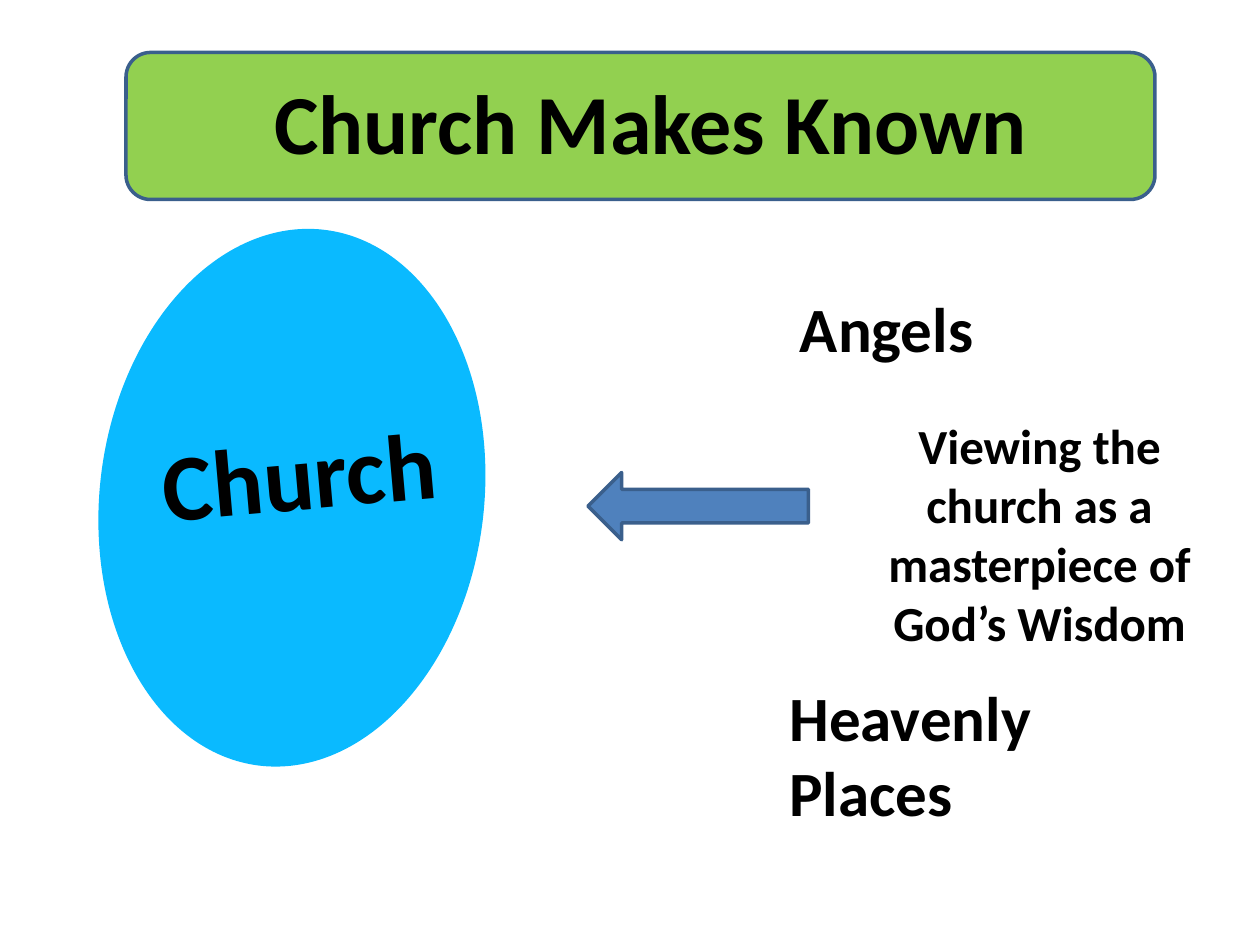
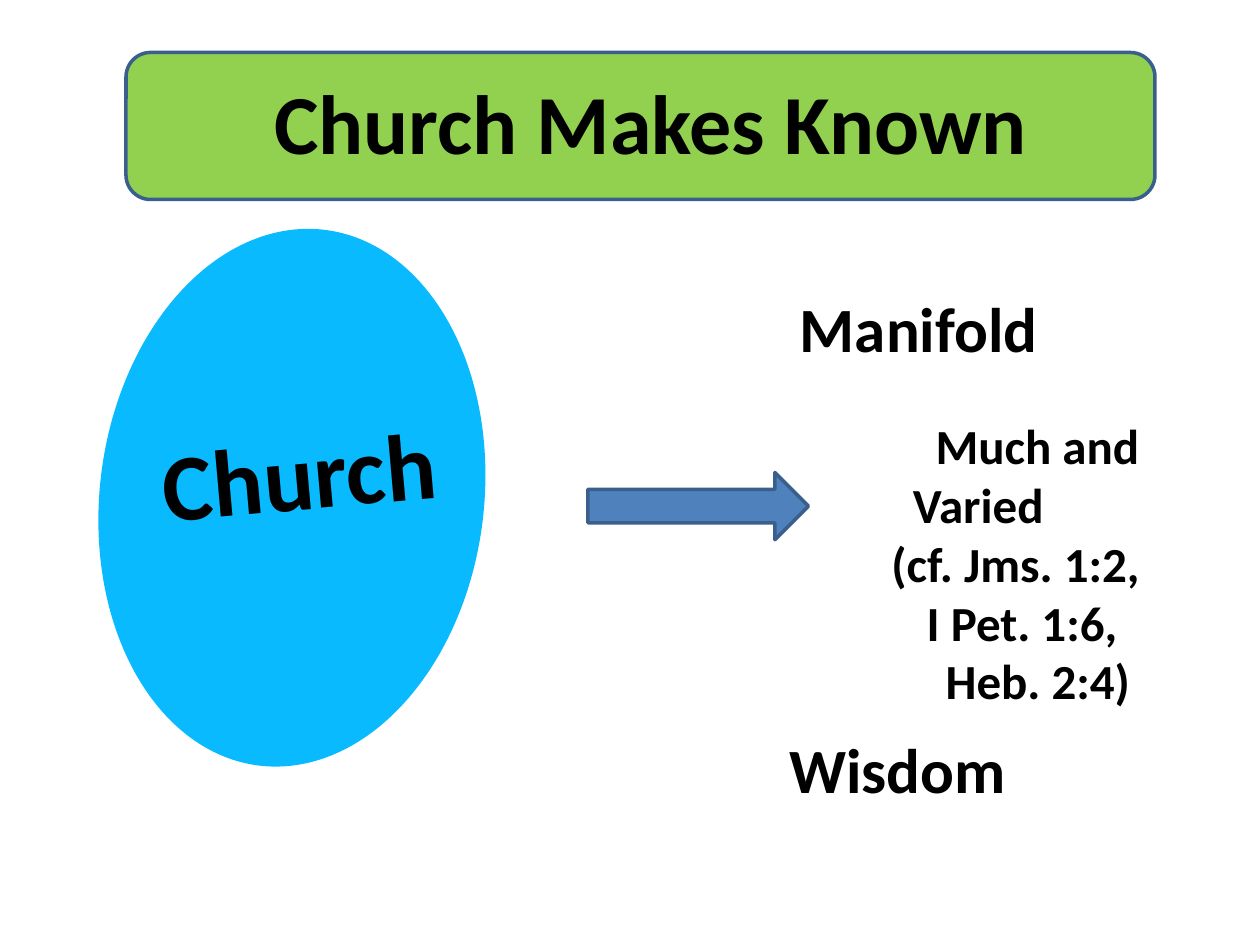
from dataclasses import dataclass
from typing import NamedTuple

import pptx
import pptx.dml.color
import pptx.enum.shapes
import pptx.enum.text
import pptx.util

SHAPES = pptx.enum.shapes.MSO_SHAPE
ALIGN = pptx.enum.text.PP_ALIGN
ANCHOR = pptx.enum.text.MSO_ANCHOR
TITLE_ONLY_LAYOUT = 5


@dataclass(frozen=True)
class Theme:
    font: str = "Calibri"
    ink: str = "000000"
    outline: str = "3A5F8C"
    outline_width: float = 2
    band: str = "92D050"
    church: str = "0ABAFF"
    arrow: str = "4F81BD"
    title_size: int = 48
    church_size: int = 54
    label_size: int = 36
    note_size: int = 28


THEME = Theme()


# Grid: twelve columns and twelve rows to the inch
class Box(NamedTuple):
    column: float
    row: float
    columns: float
    rows: float

    def lengths(self) -> list[int]:
        return [pptx.util.Inches(cells / 12) for cells in self]


class Line(NamedTuple):
    text: str
    indent: float = 0  # in inches


@dataclass(frozen=True)
class Topic:
    """What stands to the right of the church on one slide."""
    upper_label: str
    lower_label: str
    lower_box: Box
    note: list[Line]
    note_rows: float
    note_align: ALIGN
    arrow_rotation: float


BAND = Box(12, 5, 98, 14)
TITLE = Box(17, 6, 90, 11)
CHURCH = Box(9.5, 21.7, 36.6, 51.4)
CHURCH_NAME = Box(11, 39, 35, 12.1)
ARROW = Box(56, 45, 21, 6.4)
UPPER_LABEL = Box(75, 27, 38, 8.5)

TOPICS = [
    Topic("Angels", "Heavenly Places", Box(74, 64, 36, 15.7),
          [Line("Viewing the church as a masterpiece of God’s Wisdom")],
          23.9, ALIGN.CENTER, 180),
    Topic("Manifold", "Wisdom", Box(74, 69, 36, 8.5),
          [Line("Much and", 0.41), Line("Varied", 0.23),
           Line("(cf. Jms. 1:2,", 0.06), Line("I Pet. 1:6,", 0.34),
           Line("Heb. 2:4)", 0.49)],
          29.5, ALIGN.LEFT, 0),
]


def color(value: str) -> pptx.dml.color.RGBColor:
    return pptx.dml.color.RGBColor.from_string(value)


def write(shape, lines: list[Line], *, size: int, align=ALIGN.LEFT,
          anchor=ANCHOR.TOP) -> None:
    """Fill a shape with bold lines, one paragraph each."""
    frame = shape.text_frame
    frame.word_wrap = True
    frame.auto_size = pptx.enum.text.MSO_AUTO_SIZE.NONE
    frame.vertical_anchor = anchor
    for number, line in enumerate(lines):
        paragraph = frame.add_paragraph() if number else frame.paragraphs[0]
        paragraph.alignment = align
        if line.indent:
            properties = paragraph._p.get_or_add_pPr()
            properties.set("marL", str(pptx.util.Inches(line.indent)))
        run = paragraph.add_run()
        run.text = line.text
        run.font.name = THEME.font
        run.font.size = pptx.util.Pt(size)
        run.font.bold = True
        run.font.color.rgb = color(THEME.ink)


def add_text(slide, box: Box, lines: list[Line], *, rotation: float = 0,
             **text_format) -> None:
    shape = slide.shapes.add_textbox(*box.lengths())
    shape.rotation = rotation
    write(shape, lines, **text_format)


def add_figure(slide, kind: SHAPES, box: Box, fill: str, *,
               outlined: bool = True, rotation: float = 0) -> None:
    shape = slide.shapes.add_shape(kind, *box.lengths())
    shape.shadow.inherit = False
    shape.rotation = rotation
    shape.fill.solid()
    shape.fill.fore_color.rgb = color(fill)
    if outlined:
        shape.line.color.rgb = color(THEME.outline)
        shape.line.width = pptx.util.Pt(THEME.outline_width)
    else:
        shape.line.fill.background()


def add_title(slide, text: str) -> None:
    """Put the title placeholder in front of its green band."""
    add_figure(slide, SHAPES.ROUNDED_RECTANGLE, BAND, THEME.band)
    title = slide.shapes.title
    title.left, title.top, title.width, title.height = TITLE.lengths()
    write(title, [Line(text)], size=THEME.title_size, align=ALIGN.CENTER,
          anchor=ANCHOR.MIDDLE)
    slide.shapes.element.append(title.element)


def add_church(slide) -> None:
    add_figure(slide, SHAPES.OVAL, CHURCH, THEME.church,
               outlined=False, rotation=7)
    add_text(slide, CHURCH_NAME, [Line("Church")], rotation=-5,
             size=THEME.church_size, align=ALIGN.CENTER)


def add_topic_slide(presentation, topic: Topic) -> None:
    layout = presentation.slide_layouts[TITLE_ONLY_LAYOUT]
    slide = presentation.slides.add_slide(layout)

    # Shared parts
    add_church(slide)
    add_title(slide, "Church Makes Known")

    # Arrow, labels and note
    add_figure(slide, SHAPES.RIGHT_ARROW, ARROW, THEME.arrow,
               rotation=topic.arrow_rotation)
    add_text(slide, UPPER_LABEL, [Line(topic.upper_label)],
             size=THEME.label_size)
    add_text(slide, topic.lower_box, [Line(topic.lower_label)],
             size=THEME.label_size)
    add_text(slide, Box(83, 39, 32, topic.note_rows), topic.note,
             size=THEME.note_size, align=topic.note_align)


def main() -> None:
    presentation = pptx.Presentation()
    presentation.slide_width = pptx.util.Inches(10)
    presentation.slide_height = pptx.util.Inches(7.5)
    for topic in TOPICS:
        add_topic_slide(presentation, topic)
    presentation.save("out.pptx")


if __name__ == "__main__":
    main()
